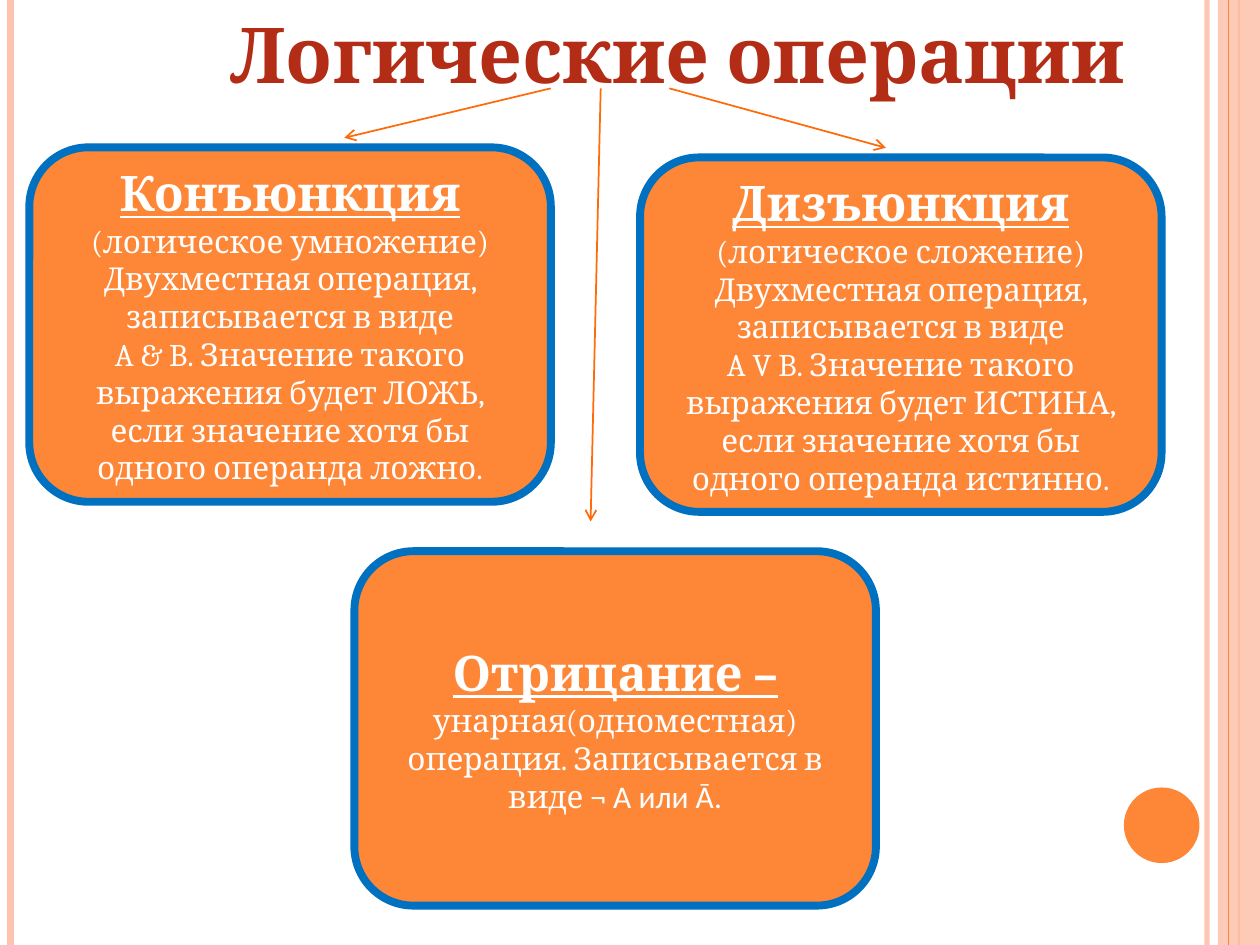
"""Build a slide on the three basic logical operations."""
from dataclasses import dataclass

from lxml.etree import SubElement
from pptx import Presentation
from pptx.dml.color import RGBColor
from pptx.enum.shapes import MSO_CONNECTOR, MSO_SHAPE
from pptx.enum.text import MSO_ANCHOR, MSO_AUTO_SIZE, PP_ALIGN
from pptx.oxml.ns import qn
from pptx.util import Pt

WHITE = RGBColor(0xFF, 0xFF, 0xFF)
ORANGE = RGBColor(0xFE, 0x86, 0x37)
PEACH = RGBColor(0xFE, 0xC3, 0xAE)
FLAME = RGBColor(0xFF, 0x6B, 0x0A)
BLUE = RGBColor(0x00, 0x70, 0xC0)
RED = RGBColor(0xB3, 0x2C, 0x16)

WIDE, HIGH = 720, 540
BOX_W, BOX_H = 298, 202.5
HEAD = {"size": 28, "bold": True, "under": True}


@dataclass
class Line:
    """A straight line, with points for its ends and weight."""

    start: tuple[float, float]
    end: tuple[float, float]
    color: RGBColor
    weight: float
    arrow: bool = False
    alpha: int = 100


@dataclass
class Card:
    """A rounded box whose paragraphs are lists of text and format."""

    left: float
    top: float
    paras: list[list[tuple[str, dict]]]


def rail(left: float, color: RGBColor, weight: float, alpha: int = 100) -> Line:
    """Return a vertical line over the full slide height."""
    return Line((left, 0), (left, HIGH), color, weight, alpha=alpha)


def pair(name: str, kind: str, sign: str, value: str, state: str) -> list:
    """Return the paragraphs for an operation on two operands."""
    body = [
        f"({kind})",
        "Двухместная операция, записывается в виде",
        f"A {sign} B. Значение такого выражения будет {value}, "
        f"если значение хотя бы одного операнда {state}.",
    ]
    return [[(name, HEAD)]] + [[(text, {})] for text in body]


RAILS = [
    rail(689.75, PEACH, 3, 93),
    rail(6, PEACH, 4.5),
    rail(708, ORANGE, 1.5),
]
INNER = rail(702, ORANGE, 0.75)
ARROWS = [
    Line((314.75, 50.5), (196.75, 78.75), FLAME, 1, True),
    Line((382.5, 50.5), (506.25, 84.5), FLAME, 1, True),
    Line((343.25, 50.5), (337.5, 298), FLAME, 1, True),
]
CARDS = [
    Card(16.75, 84.25,
         pair("Конъюнкция", "логическое умножение", "&", "ЛОЖЬ", "ложно")),
    Card(365.75, 90,
         pair("Дизъюнкция", "логическое сложение", "V", "ИСТИНА", "истинно")),
    Card(202.5, 315, [[
        ("Отрицание – ", HEAD),
        ("унарная(одноместная) операция. Записывается в виде ", {}),
        ("¬ А или Ā.", {"font": "Calibri"}),
    ]]),
]


def fade(fill, alpha: int) -> None:
    """Set the opacity in percent of a solid fill element."""
    tone = fill.find(f".//{qn('a:srgbClr')}")
    SubElement(tone, qn("a:alpha"), val=str(alpha * 1000))


def write(para, text: str, *, size: float = 18, font: str = "Cambria",
          color: RGBColor = WHITE, bold: bool = False,
          under: bool = False) -> None:
    """Add a run of text to a centred paragraph."""
    para.alignment = PP_ALIGN.CENTER
    run = para.add_run()
    run.text = text
    run.font.size = Pt(size)
    run.font.name = font
    run.font.color.rgb = color
    run.font.bold = bold
    run.font.underline = under


def draw_line(slide, line: Line) -> None:
    """Draw a line, with an arrowhead if asked."""
    ends = [Pt(n) for n in (*line.start, *line.end)]
    link = slide.shapes.add_connector(MSO_CONNECTOR.STRAIGHT, *ends)
    link.line.color.rgb = line.color
    link.line.width = Pt(line.weight)
    props = link.line._get_or_add_ln()
    if line.alpha < 100:
        fade(props, line.alpha)
    if line.arrow:
        SubElement(props, qn("a:tailEnd"), type="arrow")
    SubElement(link._element.spPr, qn("a:effectLst"))


def draw_shape(slide, kind: MSO_SHAPE, left: float, top: float,
               width: float, height: float, color: RGBColor):
    """Draw a filled shape with no line or shadow."""
    shape = slide.shapes.add_shape(
        kind, Pt(left), Pt(top), Pt(width), Pt(height))
    shape.shadow.inherit = False
    shape.fill.solid()
    shape.fill.fore_color.rgb = color
    shape.line.fill.background()
    return shape


def draw_card(slide, card: Card) -> None:
    """Draw a rounded box with its text."""
    shape = draw_shape(slide, MSO_SHAPE.FLOWCHART_ALTERNATE_PROCESS,
                       card.left, card.top, BOX_W, BOX_H, ORANGE)
    shape.line.color.rgb = BLUE
    shape.line.width = Pt(4.5)
    frame = shape.text_frame
    frame.word_wrap = True
    frame.vertical_anchor = MSO_ANCHOR.MIDDLE
    for i, runs in enumerate(card.paras):
        para = frame.add_paragraph() if i else frame.paragraphs[0]
        for text, form in runs:
            write(para, text, **form)


def draw_title(slide) -> None:
    """Draw the slide title."""
    box = slide.shapes.add_textbox(Pt(118), Pt(0), Pt(538.5), Pt(60.5))
    frame = box.text_frame
    frame.word_wrap = False
    frame.auto_size = MSO_AUTO_SIZE.SHAPE_TO_FIT_TEXT
    write(frame.paragraphs[0], "Логические операции",
          size=44, color=RED, bold=True)


def main() -> None:
    """Build and save the slide."""
    deck = Presentation()
    deck.slide_width, deck.slide_height = Pt(WIDE), Pt(HIGH)
    slide = deck.slides.add_slide(deck.slide_layouts[6])
    for line in RAILS:
        draw_line(slide, line)
    band = draw_shape(slide, MSO_SHAPE.RECTANGLE, 696, 0, 24, HIGH, PEACH)
    fade(band._element.spPr, 87)
    draw_line(slide, INNER)
    draw_shape(slide, MSO_SHAPE.OVAL, 642.25, 450, 43.2, 43.2, ORANGE)
    draw_title(slide)
    for card in CARDS:
        draw_card(slide, card)
    for line in ARROWS:
        draw_line(slide, line)
    deck.save("out.pptx")


if __name__ == "__main__":
    main()
